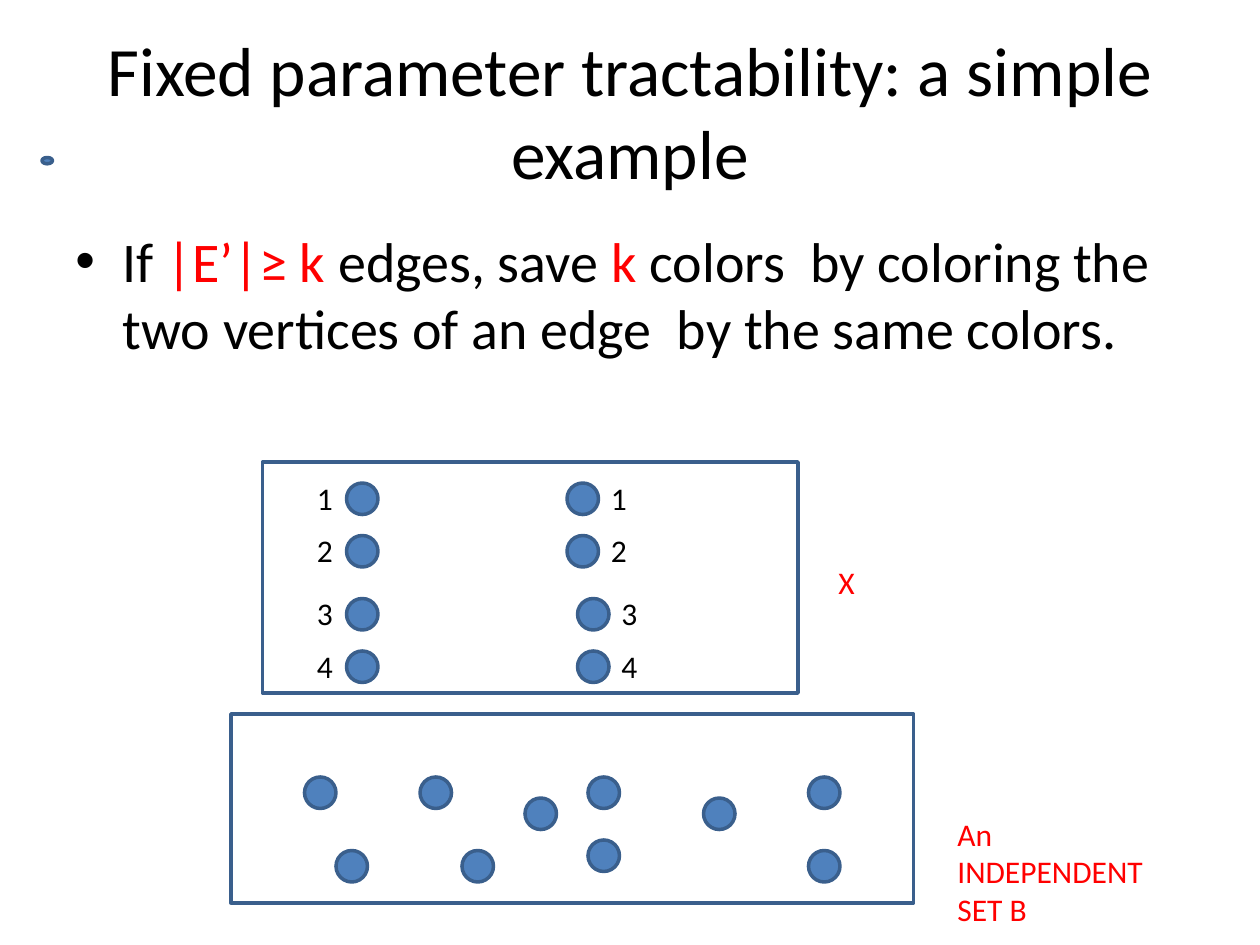
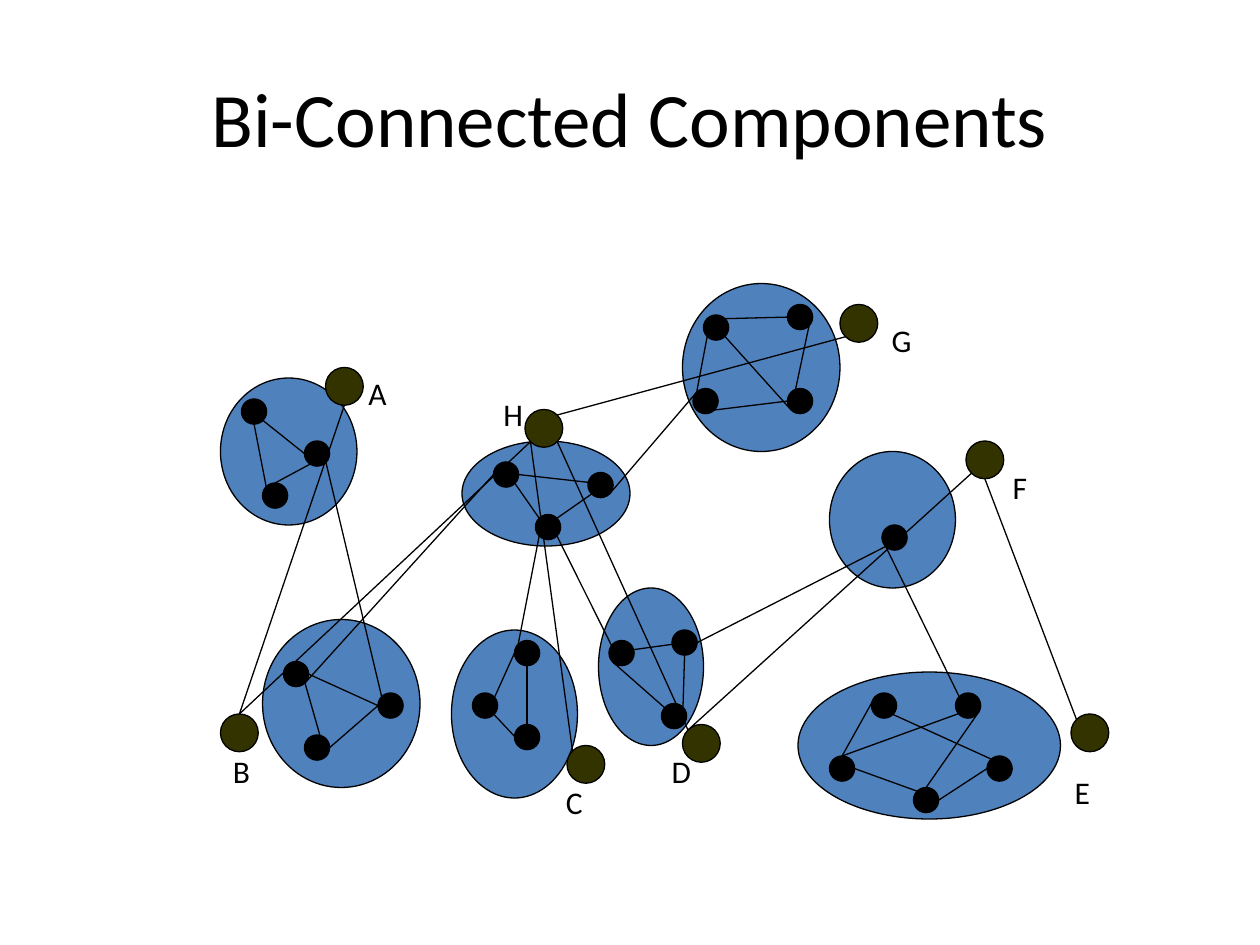
import math
import pptx
import pptx.dml.color
import pptx.enum.shapes
import pptx.enum.text
import pptx.oxml
import pptx.util

Pt = pptx.util.Pt
SHAPE = pptx.enum.shapes.MSO_SHAPE
ALIGN = pptx.enum.text.PP_ALIGN
ANCHOR = pptx.enum.text.MSO_ANCHOR
DRAWING = 'xmlns:a="http://schemas.openxmlformats.org/drawingml/2006/main"'

FONT = "Calibri"
BLACK, RED, BLUE, NAVY, OLIVE = "000000", "FF0000", "4F81BD", "3A5F8C", "333300"

COLOR_ROWS = [(276, 324), (306, 324), (342, 330), (372, 330)]
INDEPENDENT_DOTS = [(174, 444), (240, 444), (336, 444), (462, 444), (300, 456),
                    (402, 456), (336, 480), (192, 486), (264, 486), (462, 486)]

COMPONENTS = [(150, 354, 90, 96), (390, 162, 90, 96), (342, 336, 60, 90),
              (264, 252, 96, 60), (474, 258, 72, 78), (258, 360, 72, 96),
              (456, 384, 150, 84), (126, 216, 78, 84)]
VERTICES = {
    "a1": (138, 228), "a2": (174, 252), "a3": (150, 276),
    "b1": (162, 378), "b2": (174, 420), "b3": (216, 396),
    "c1": (294, 366), "c2": (270, 396), "c3": (294, 414),
    "d1": (348, 366), "d2": (384, 360), "d3": (378, 402),
    "e1": (498, 396), "e2": (546, 396), "e3": (474, 432),
    "e4": (564, 432), "e5": (522, 450),
    "f1": (504, 300),
    "g1": (402, 180), "g2": (450, 174), "g3": (396, 222), "g4": (450, 222),
    "h1": (282, 264), "h2": (336, 270), "h3": (306, 294),
}
CUT_VERTICES = {
    "A": (186, 210), "B": (126, 408), "C": (324, 426), "D": (390, 414),
    "E": (612, 408), "F": (552, 252), "G": (480, 174), "H": (300, 234),
}
CUT_LABELS = {
    "A": (198, 210, 30), "B": (120, 426, 30), "C": (300, 444, 40), "D": (372, 426, 30),
    "E": (588, 438, 42), "F": (552, 264, 42), "G": (492, 180, 36), "H": (276, 222, 30),
}
VERTEX_SIZE, CUT_SIZE = 14.4, 21.6
COMPASS = ["e", "se", "s", "sw", "w", "nw", "n", "ne"]
VERTEX_EDGES = """
a1.s-a3.nw a3.n-a2.e a1.se-a2.w a2.se-b3.nw
b1.se-b2.se b1.e-b3.w b2.e-b3.w b1.se-h1.w
c1.s-c3.s c2.s-c1.w c2.se-c3.s
d1.w-d2.mid d3.mid-d1.sw d2.s-d3.ne
e3.n-e1.nw e1.se-e4.e e3.e-e5.nw e2.e-e3.n e2.se-e5.n e5.e-e4.w
f1.sw-d2.e f1.sw-e2.nw
g2.se-g4.sw g3.se-g4.w g4.sw-g1.se g1.ne-g2.w g3.nw-g1.sw
h2.e-h1.e h1.se-h3.nw h3.ne-h2.sw h3.se-d1.s h3.sw-c1.nw h2.se-g3.nw
"""
CUT_EDGES = "A.s-B.n B.n-H.sw H.sw-C.nw H.ne-G.sw H.se-D.nw D.nw-F.sw F.s-E.nw"


def rgb(color):
    return pptx.dml.color.RGBColor.from_string(color)


def apply(target, values):
    for name, value in values.items():
        setattr(target, name, value)


def write(para, text, size, color=BLACK):
    span = para.add_run()
    span.text = text
    apply(span.font, {"name": FONT, "size": Pt(size)})
    span.font.color.rgb = rgb(color)


def add_titled_page(deck, title, top, size):
    page = deck.slides.add_slide(deck.slide_layouts[5])
    box = page.shapes.title
    apply(box, {"left": Pt(36), "top": Pt(top), "width": Pt(648), "height": Pt(90)})
    apply(box.text_frame, {"word_wrap": True, "vertical_anchor": ANCHOR.MIDDLE})
    para = box.text_frame.paragraphs[0]
    para.alignment = ALIGN.CENTER
    write(para, title, size)
    return page


def add_text(page, left, top, width, spans, height=28.8, size=18, align=ALIGN.LEFT):
    box = page.shapes.add_textbox(Pt(left), Pt(top), Pt(width), Pt(height))
    box.text_frame.word_wrap = True
    para = box.text_frame.paragraphs[0]
    para.alignment = align
    for text, color in spans:
        write(para, text, size, color)
    return para


def add_bullet(para, indent):
    properties = para._p.get_or_add_pPr()
    properties.set("marL", str(Pt(indent)))
    properties.set("indent", str(-Pt(indent)))
    for tag in ('buFont {} typeface="Arial"', 'buChar {} char="•"'):
        properties.append(pptx.oxml.parse_xml(f"<a:{tag.format(DRAWING)}/>"))


def add_figure(page, kind, left, top, width, height, fill, line=BLACK, weight=0.75):
    shape = page.shapes.add_shape(kind, Pt(left), Pt(top), Pt(width), Pt(height))
    shape.shadow.inherit = False
    if fill:
        shape.fill.solid()
        shape.fill.fore_color.rgb = rgb(fill)
    else:
        shape.fill.background()
    shape.line.color.rgb = rgb(line)
    shape.line.width = Pt(weight)


def add_set_dot(page, left, top, width=18, height=18):
    add_figure(page, SHAPE.OVAL, left, top, width, height, BLUE, NAVY, 2)


def add_set_frame(page, left, top, width, height):
    add_figure(page, SHAPE.RECTANGLE, left, top, width, height, None, NAVY, 2)


def add_circles(page, corners, size, fill):
    for left, top in corners.values():
        add_figure(page, SHAPE.OVAL, left, top, size, size, fill)


def rim_point(end, corners, size):
    name, side = end.split(".")
    left, top = corners[name]
    x, y = left + size / 2, top + size / 2
    if side in COMPASS:
        angle = COMPASS.index(side) * math.pi / 4
        x += size / 2 * math.cos(angle)
        y += size / 2 * math.sin(angle)
    return Pt(x), Pt(y)


def add_edges(page, edges, corners, size):
    for edge in edges.split():
        start, finish = (rim_point(end, corners, size) for end in edge.split("-"))
        line = page.shapes.add_connector(
            pptx.enum.shapes.MSO_CONNECTOR.STRAIGHT, *start, *finish)
        line.line.color.rgb = rgb(BLACK)
        line.line.width = Pt(0.75)
        line._element.spPr.append(pptx.oxml.parse_xml(f"<a:effectLst {DRAWING}/>"))


def build_tractability(deck):
    page = add_titled_page(deck, "Fixed parameter tractability: a simple example", 18, 39.6)
    body = [("If ", BLACK), ("|E’|≥ k ", RED), ("edges, save ", BLACK), ("k ", RED),
            ("colors  by coloring the two vertices of an edge  by the same colors.", BLACK)]
    add_bullet(add_text(page, 36, 126, 648, body, height=356.4, size=32), 27)
    add_text(page, 468, 318, 132, [(" X", RED)])
    add_text(page, 540, 462, 126, [("An INDEPENDENT  SET B", RED)], height=72.7)
    add_set_dot(page, 24, 90, 6, 3.6)

    add_set_frame(page, 150, 264, 306, 132)
    for number, (top, right) in enumerate(COLOR_ROWS, 1):
        for left, label_shift in ((198, -24), (right, 18)):
            add_set_dot(page, left, top)
            add_text(page, left + label_shift, top - 6, 24, [(str(number), BLACK)])

    add_set_frame(page, 132, 408, 390, 108)
    for left, top in INDEPENDENT_DOTS:
        add_set_dot(page, left, top)


def build_components(deck):
    page = add_titled_page(deck, "Bi-Connected Components", 21.6, 44)
    for component in COMPONENTS:
        add_figure(page, SHAPE.OVAL, *component, BLUE)
    add_circles(page, VERTICES, VERTEX_SIZE, BLACK)
    add_edges(page, VERTEX_EDGES, VERTICES, VERTEX_SIZE)
    add_circles(page, CUT_VERTICES, CUT_SIZE, OLIVE)
    add_edges(page, CUT_EDGES, CUT_VERTICES, CUT_SIZE)
    for name, place in CUT_LABELS.items():
        add_text(page, *place, [(name, BLACK)], align=ALIGN.RIGHT)


def main():
    deck = pptx.Presentation()
    apply(deck, {"slide_width": Pt(720), "slide_height": Pt(540)})
    build_tractability(deck)
    build_components(deck)
    deck.save("out.pptx")


if __name__ == "__main__":
    main()
